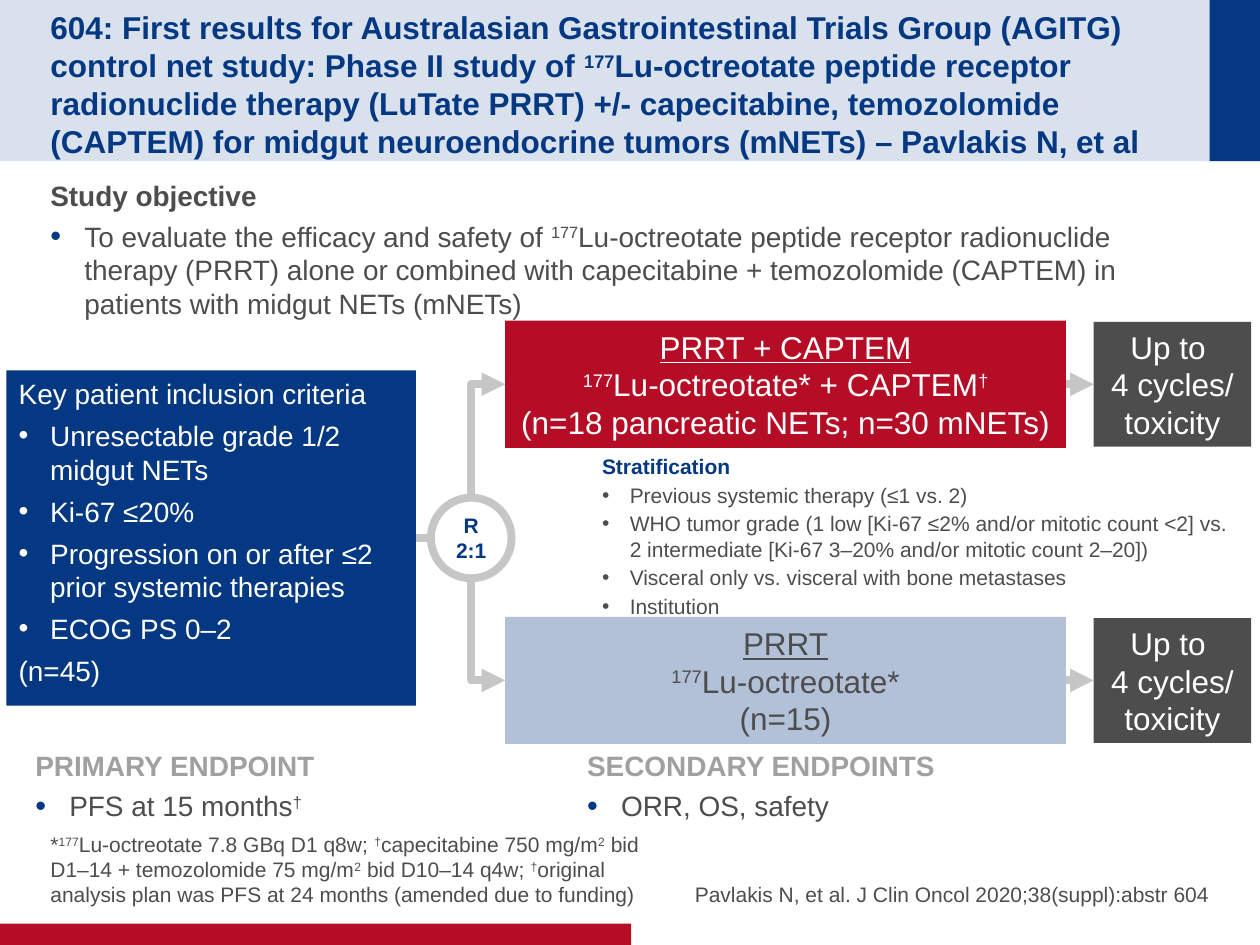
from lxml import etree
from pptx import Presentation
from pptx.dml.color import RGBColor
from pptx.enum import dml, shapes, text
from pptx.oxml import ns
from pptx.util import Inches, Pt

NAVY = RGBColor(0x04, 0x38, 0x82)
PALE = RGBColor(0xD9, 0xE1, 0xEC)
RED = RGBColor(0xB6, 0x0D, 0x27)
DARK = RGBColor(0x4D, 0x4D, 0x4D)
GREY = RGBColor(0xA0, 0xA0, 0xA0)
SILVER = RGBColor(0xC6, 0xC6, 0xC6)
BLUE = RGBColor(0xB2, 0xC0, 0xD8)
WHITE = RGBColor(0xFF, 0xFF, 0xFF)
LEFT, CENTER, RIGHT = text.PP_ALIGN.LEFT, text.PP_ALIGN.CENTER, text.PP_ALIGN.RIGHT
TOP, MIDDLE, BOTTOM = text.MSO_ANCHOR.TOP, text.MSO_ANCHOR.MIDDLE, text.MSO_ANCHOR.BOTTOM

# Content: ^...^ is superscript, _..._ is underlined, \n is a line break
TITLE = ("604: First results for Australasian Gastrointestinal Trials Group (AGITG) control net "
         "study: Phase II study of ^177^Lu-octreotate peptide receptor radionuclide therapy "
         "(LuTate PRRT) +/- capecitabine, temozolomide (CAPTEM) for midgut neuroendocrine "
         "tumors (mNETs) – Pavlakis N, et al")
# Headed lists: position, heading, heading colour, bullets
SECTIONS = [
    ((0.4, 1.37, 9.2, 1.2), "Study objective", DARK,
     ["To evaluate the efficacy and safety of ^177^Lu-octreotate peptide receptor radionuclide "
      "therapy (PRRT) alone or combined with capecitabine + temozolomide (CAPTEM) in patients "
      "with midgut NETs (mNETs)"]),
    ((0.28, 5.89, 4.52, 0.85), "PRIMARY ENDPOINT", GREY, ["PFS at 15 months^†^"]),
    ((4.66, 5.89, 4.72, 0.85), "SECONDARY ENDPOINTS", GREY, ["ORR, OS, safety"]),
]
CRITERIA = ["Unresectable grade 1/2 midgut NETs", "Ki-67 ≤20%",
            "Progression on or after ≤2 prior systemic therapies", "ECOG PS 0–2"]
STRATA = ["Previous systemic therapy (≤1 vs. 2)",
          "WHO tumor grade (1 low [Ki-67 ≤2% and/or mitotic count <2] vs. \n"
          "2 intermediate [Ki-67 3–20% and/or mitotic count 2–20])",
          "Visceral only vs. visceral with bone metastases", "Institution"]
# Trial arms: centre height, text, fill, text colour
ARMS = [
    (3.05, "_PRRT + CAPTEM_\n^177^Lu-octreotate* + CAPTEM^†^\n"
           "(n=18 pancreatic NETs; n=30 mNETs)", RED, WHITE),
    (5.40, "_PRRT_\n^177^Lu-octreotate*\n(n=15)", BLUE, DARK),
]
DURATION = "Up to \n4 cycles/\ntoxicity"
FOOTNOTE = ("*^177^Lu-octreotate 7.8 GBq D1 q8w; ^†^capecitabine 750 mg/m^2^ bid D1–14 + "
            "temozolomide 75 mg/m^2^ bid D10–14 q4w; ^†^original analysis plan was PFS at "
            "24 months (amended due to funding)")
CITATION = "Pavlakis N, et al. J Clin Oncol 2020;38(suppl):abstr 604"

deck = Presentation()
deck.slide_width, deck.slide_height = Inches(10), Inches(7.5)
page = deck.slides.add_slide(deck.slide_layouts[5])


def write(para, words, size, color, bold=False, align=LEFT, after=0):
    para.font.name, para.font.size, para.font.bold = "Arial", Pt(size), bold
    para.font.color.rgb = color
    para.alignment, para.space_after, para.space_before = align, Pt(after), Pt(0)
    for number, line in enumerate(words.split("\n")):
        if number:
            para.add_line_break()
        for i, part in enumerate(line.split("_")):
            for j, piece in enumerate(part.split("^")):
                if not piece:
                    continue
                span = para.add_run()
                span.text = piece
                if i % 2:
                    span.font.underline = True
                if j % 2:
                    span.font._element.set("baseline", "30000")


def add_bullet(para, indent, color=None, percent=100):
    props = para._p.get_or_add_pPr()
    props.set("marL", str(Inches(indent)))
    props.set("indent", str(-Inches(indent)))
    marks = []
    if color is not None:
        holder = etree.Element(ns.qn("a:buClr"))
        etree.SubElement(holder, ns.qn("a:srgbClr"), val=str(color))
        marks.append(holder)
    marks.append(etree.Element(ns.qn("a:buSzPct"), val=str(percent * 1000)))
    marks.append(etree.Element(ns.qn("a:buFont"), typeface="Arial"))
    marks.append(etree.Element(ns.qn("a:buChar"), char="•"))
    defaults = props.find(ns.qn("a:defRPr"))
    for mark in marks:
        defaults.addprevious(mark)


def set_frame(box, anchor=TOP, insets=(0, 0.05, 0, 0.05), wrap=True):
    frame = box.text_frame
    frame.auto_size, frame.word_wrap = text.MSO_AUTO_SIZE.NONE, wrap
    frame.vertical_anchor = anchor
    (frame.margin_left, frame.margin_top,
     frame.margin_right, frame.margin_bottom) = map(Inches, insets)
    return frame


def add_text(place, **layout):
    return set_frame(page.shapes.add_textbox(*map(Inches, place)), **layout)


def add_block(place, fill, kind=shapes.MSO_SHAPE.RECTANGLE):
    box = page.shapes.add_shape(kind, *map(Inches, place))
    box.shadow.inherit = False
    box.line.fill.background()
    if fill is None:
        box.fill.background()
    else:
        box.fill.solid()
        box.fill.fore_color.rgb = fill
    return box


def add_line(start, end, arrow=True, dash=None, kind=shapes.MSO_CONNECTOR.STRAIGHT):
    line = page.shapes.add_connector(kind, *map(Inches, start + end))
    line.line.color.rgb, line.line.width = SILVER, Pt(4.5)
    if dash is not None:
        line.line.dash_style = dash
    if arrow:
        etree.SubElement(line.line._get_or_add_ln(), ns.qn("a:tailEnd"), type="triangle")
    etree.SubElement(line._element.spPr, ns.qn("a:effectLst"))
    return line


def add_elbow(start, end):
    """Vertical first, then horizontal: a two-segment bend turned a quarter."""
    (x1, y1), (x2, y2) = start, end
    middle_x, middle_y = (x1 + x2) / 2, (y1 + y2) / 2
    half_long, half_short = abs(y2 - y1) / 2, (x2 - x1) / 2
    upward = 1 if y2 < y1 else -1
    line = add_line((middle_x + half_long, middle_y + upward * half_short),
                    (middle_x - half_long, middle_y - upward * half_short),
                    kind=shapes.MSO_CONNECTOR.ELBOW)
    props = line._element.spPr
    props.find(ns.qn("a:prstGeom")).set("prst", "bentConnector2")
    props.find(ns.qn("a:xfrm")).set("rot", str((90 if upward == 1 else 270) * 60000))


# Header and footer bands, title in front of them
for place, fill in [((0, 0, 10, 1.28), PALE), ((9.6, 0, 0.4, 1.28), NAVY),
                    ((0, 7.33, 5.01, 0.17), RED)]:
    add_block(place, fill)
title = page.shapes.title
title.left, title.top, title.width, title.height = map(Inches, (0.4, 0.2, 9.01, 0.88))
write(set_frame(title, MIDDLE, (0, 0.05, 0, 0)).paragraphs[0], TITLE, 18, NAVY, bold=True)
page.shapes._spTree.append(title._element)

# Objective and endpoints
for place, heading, color, bullets in SECTIONS:
    frame = add_text(place)
    write(frame.paragraphs[0], heading, 16, color, bold=True, after=4)
    for item in bullets:
        para = frame.add_paragraph()
        write(para, item, 16, DARK, after=4)
        add_bullet(para, 0.27, NAVY, 110)

# Footnote and citation
for place, words, align in [((0.4, 6.67, 4.92, 0.53), FOOTNOTE, LEFT),
                            ((5.08, 6.67, 4.52, 0.53), CITATION, RIGHT)]:
    frame = add_text(place, anchor=BOTTOM, insets=(0, 0, 0, 0))
    write(frame.paragraphs[0], words, 12, DARK, align=align)

# Inclusion criteria
frame = set_frame(add_block((0.05, 2.94, 3.25, 2.66), NAVY), insets=(0.1, 0.05, 0.1, 0.05))
write(frame.paragraphs[0], "Key patient inclusion criteria", 16, WHITE, after=4.8)
for item in CRITERIA:
    para = frame.add_paragraph()
    write(para, item, 16, WHITE, after=4.8)
    add_bullet(para, 0.25)
write(frame.add_paragraph(), "(n=45)", 16, WHITE)

# Randomisation
circle = add_block((3.42, 3.95, 0.64, 0.64), None, shapes.MSO_SHAPE.OVAL)
circle.line.color.rgb, circle.line.width = SILVER, Pt(4.5)
frame = set_frame(circle, MIDDLE, (0.1, 0.05, 0.1, 0.05), wrap=False)
write(frame.paragraphs[0], "R\n2:1", 12, NAVY, bold=True, align=CENTER)
add_line((3.3, 4.27), (3.42, 4.27), arrow=False)

# Trial arms with their arrows and durations
for (middle, words, fill, color), edge, dash in zip(
        ARMS, (3.95, 4.59), (None, dml.MSO_LINE.ROUND_DOT)):
    add_elbow((3.74, edge), (4.01, middle))
    add_line((8.46, middle), (8.68, middle), dash=dash)
    for left, width, height, label, back, ink in [
            (4.01, 4.45, 1.01, words, fill, color), (8.68, 1.25, 0.99, DURATION, DARK, WHITE)]:
        box = add_block((left, middle - height / 2, width, height), back)
        frame = set_frame(box, MIDDLE, (0.1, 0, 0.1, 0))
        write(frame.paragraphs[0], label, 18, ink, align=CENTER)

# Stratification
frame = add_text((4.68, 3.55, 5.26, 1.35), insets=(0.1, 0.05, 0.1, 0.05))
write(frame.paragraphs[0], "Stratification", 12, NAVY, bold=True, after=2)
for item in STRATA:
    para = frame.add_paragraph()
    write(para, item, 12, DARK, after=2)
    add_bullet(para, 0.22)

deck.save("out.pptx")
